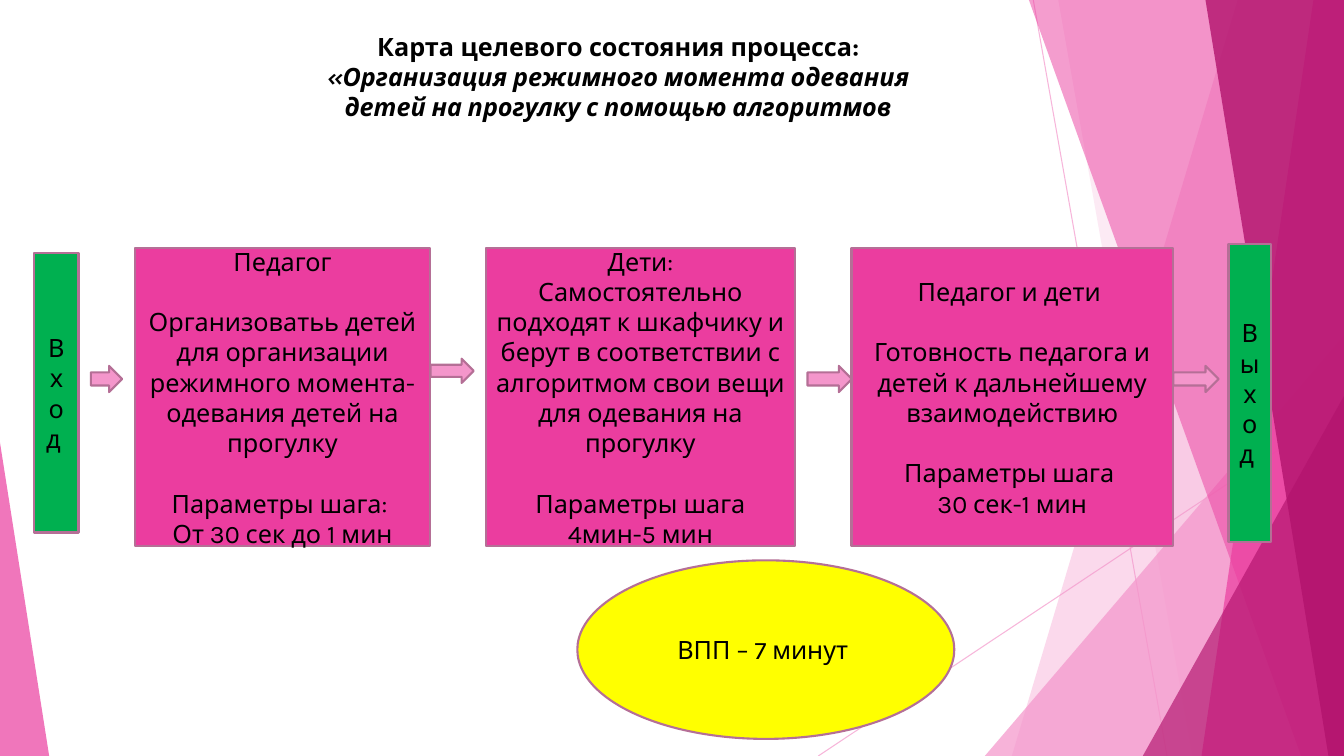
from dataclasses import dataclass

from lxml import etree
from pptx import Presentation
from pptx import util as u
from pptx.dml.color import RGBColor
from pptx.enum import shapes, text
from pptx.oxml.ns import qn


@dataclass(frozen=True)
class Theme:
    font: str = "Karla"
    size: int = 18
    blank_line: float = 21.6
    outline_width: float = 1.5
    hairline_width: float = 0.75
    ink: str = "000000"
    outline: str = "B56F96"
    light: str = "F496CB"
    pink: str = "EB3D9F"
    dark: str = "B2136D"
    green: str = "00B050"
    yellow: str = "FFFF00"


THEME = Theme()
WIDTH, HEIGHT = 33.87, 19.05
KIND = shapes.MSO_SHAPE


class SlideBuilder:
    def __init__(self, page, theme):
        self.page = page
        self.theme = theme

    def paint(self, fill, color, opacity=100):
        fill.solid()
        fill.fore_color.rgb = RGBColor.from_string(color)
        if opacity < 100:
            tint = fill._xPr.find(qn("a:solidFill"))[0]
            etree.SubElement(tint, qn("a:alpha")).set("val", str(opacity * 1000))

    def hairline(self, start, end):
        line = self.page.shapes.add_connector(
            shapes.MSO_CONNECTOR.STRAIGHT, *map(u.Cm, start + end))
        line.line.width = u.Pt(self.theme.hairline_width)
        self.paint(line.line.fill, self.theme.light, 70)
        etree.SubElement(line._element.spPr, qn("a:effectLst"))

    def band(self, top_x, bottom_x, color, opacity):
        corners = [(WIDTH, 0), (WIDTH, HEIGHT), (bottom_x, HEIGHT)]
        builder = self.page.shapes.build_freeform(u.Cm(top_x), u.Cm(0))
        builder.add_line_segments([(u.Cm(x), u.Cm(y)) for x, y in corners])
        band = builder.convert_to_shape()
        band.shadow.inherit = False
        self.paint(band.fill, color, opacity)
        band.line.fill.background()

    def triangle(self, place, apex, color, opacity):
        triangle = self.shape(KIND.ISOSCELES_TRIANGLE, place, color, opacity)
        triangle.adjustments[0] = apex
        triangle.line.fill.background()

    def shape(self, kind, place, color, opacity=100):
        shape = self.page.shapes.add_shape(kind, *map(u.Cm, place))
        shape.shadow.inherit = False
        self.paint(shape.fill, color, opacity)
        self.paint(shape.line.fill, self.theme.outline)
        shape.line.width = u.Pt(self.theme.outline_width)
        return shape

    def labelled(self, kind, place, color, *blocks):
        shape = self.shape(kind, place, color)
        shape.text_frame.vertical_anchor = text.MSO_ANCHOR.MIDDLE
        self.fill_text(shape.text_frame, blocks)

    def title(self, place, heading, subject):
        box = self.page.shapes.add_textbox(*map(u.Cm, place))
        self.fill_text(box.text_frame, [[heading, subject]], bold=True)
        box.text_frame.paragraphs[1].runs[0].font.italic = True

    def fill_text(self, frame, blocks, bold=False):
        frame.word_wrap = True
        para = frame.paragraphs[0]
        for block_index, block in enumerate(blocks):
            for line_index, wording in enumerate(block):
                if block_index or line_index:
                    para = frame.add_paragraph()
                if block_index and not line_index:
                    para.space_before = u.Pt(self.theme.blank_line)
                para.alignment = text.PP_ALIGN.CENTER
                span = para.add_run()
                span.text = wording
                span.font.name = self.theme.font
                span.font.size = u.Pt(self.theme.size)
                span.font.bold = bold
                span.font.color.rgb = RGBColor.from_string(self.theme.ink)


def draw_backdrop(slide):
    slide.hairline((26.04, 0), (29.41, HEIGHT))
    slide.hairline((WIDTH, 10.24), (20.62, HEIGHT))
    slide.band(31.19, 25.5, THEME.light, 36)
    slide.band(26.67, 30.05, THEME.light, 20)
    slide.triangle((24.82, 8.46, 9.05, 10.59), 1, THEME.light, 72)
    slide.band(25.93, 32.79, THEME.pink, 50)
    slide.band(33.1, 30.28, THEME.pink, 70)
    slide.band(30.38, 33.48, THEME.dark, 80)
    slide.triangle((28.8, 9.98, 5.07, 9.07), 1, THEME.dark, 66)
    slide.triangle((0, 11.15, 1.24, 7.9), 0, THEME.pink, 70)


def draw_process(slide):
    slide.title(
        (7.11, 0.66, 16.94, 2.57),
        "Карта целевого состояния процесса:",
        "«Организация режимного момента одевания детей на прогулку с помощью алгоритмов")

    slide.labelled(KIND.RECTANGLE, (0.86, 6.38, 1.12, 7.04), THEME.green, ["Вход "])
    steps = [
        (3.4, 7.44, [
            ["Педагог"],
            ["Организоватьь детей для организации режимного момента- одевания детей на прогулку"],
            ["Параметры шага: ", "От 30 сек до 1 мин"]]),
        (12.24, 7.8, [
            ["Дети:",
             "Самостоятельно подходят к шкафчику и берут в соответствии с "
             "алгоритмом свои вещи для одевания на прогулку"],
            ["Параметры шага", "4мин-5 мин"]]),
        (21.46, 8.1, [
            ["Педагог и дети "],
            ["Готовность педагога и детей к дальнейшему взаимодействию"],
            ["Параметры шага ", "30 сек-1 мин"]]),
    ]
    for left, width, blocks in steps:
        slide.labelled(KIND.RECTANGLE, (left, 6.25, width, 7.52), THEME.pink, *blocks)
    slide.labelled(KIND.RECTANGLE, (30.96, 6.15, 1.07, 7.52), THEME.green, ["Выход "])

    arrows = [(2.29, 9.22, 0.79, 0.66), (10.85, 9.04, 1.09, 0.61),
              (20.35, 9.22, 1.12, 0.66), (29.57, 9.22, 1.14, 0.66)]
    for place in arrows:
        slide.shape(KIND.RIGHT_ARROW, place, THEME.light)

    slide.labelled(KIND.OVAL, (14.55, 14.12, 9.5, 4.5), THEME.yellow, ["ВПП – 7 минут "])


def main():
    deck = Presentation()
    deck.slide_width, deck.slide_height = u.Cm(WIDTH), u.Cm(HEIGHT)
    page = deck.slides.add_slide(deck.slide_layouts[6])
    slide = SlideBuilder(page, THEME)
    draw_backdrop(slide)
    draw_process(slide)
    deck.save("out.pptx")


if __name__ == "__main__":
    main()
